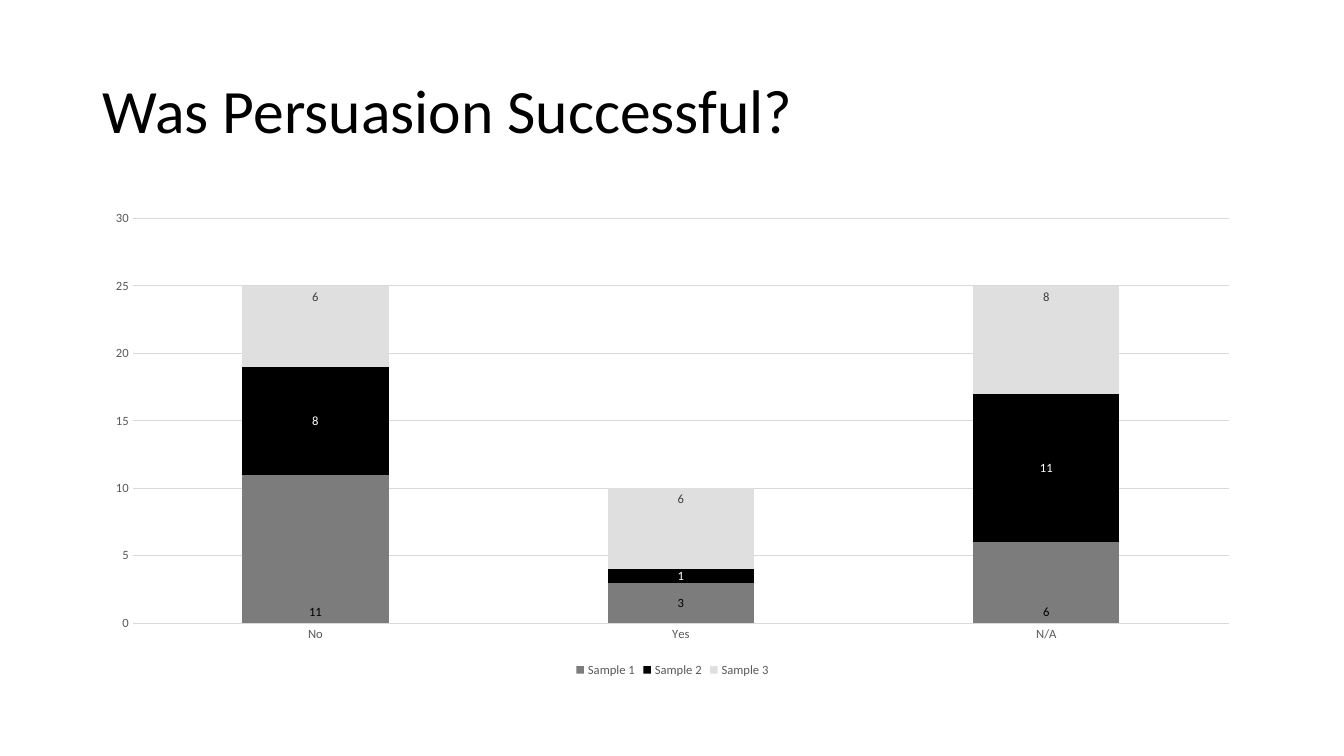
from pptx import Presentation
from pptx.chart.data import CategoryChartData
from pptx.dml.color import RGBColor
from pptx.enum.chart import XL_CHART_TYPE as CHART, XL_LABEL_POSITION as POS
from pptx.enum.chart import XL_LEGEND_POSITION as LEGEND, XL_TICK_MARK as TICK
from pptx.enum.text import MSO_ANCHOR as ANCHOR
from pptx.util import Inches, Pt

COLORS = {
    "black": "000000",
    "white": "FFFFFF",
    "gray": "7C7C7C",
    "light": "DFDFDF",
    "grid": "D9D9D9",
    "axis": "595959",
    "dark": "404040",
}
SAMPLES = [
    ("Sample 1", (11, 3, 6), "gray", POS.INSIDE_BASE, "black"),
    ("Sample 2", (8, 1, 11), "black", POS.CENTER, "white"),
    ("Sample 3", (6, 6, 8), "light", POS.INSIDE_END, "dark"),
]


def rgb(name):
    return RGBColor.from_string(COLORS[name])


def style_font(font, size, color):
    font.name = "Calibri"
    font.size = Pt(size)
    font.color.rgb = rgb(color)


prs = Presentation()
prs.slide_width = Inches(13.33)
prs.slide_height = Inches(7.5)
s = prs.slides.add_slide(prs.slide_layouts[6])

title = s.shapes.add_textbox(Inches(0.92), Inches(0.4), Inches(11.5), Inches(1.45))
tf = title.text_frame
tf.word_wrap = True
tf.vertical_anchor = ANCHOR.MIDDLE
p = tf.paragraphs[0]
p.line_spacing = 0.9
r = p.add_run()
r.text = "Was Persuasion Successful?"
style_font(r.font, 44, "black")

data = CategoryChartData()
data.categories = ["No", "Yes", "N/A"]
for name, values, *_ in SAMPLES:
    data.add_series(name, values)
chart = s.shapes.add_chart(
    CHART.COLUMN_STACKED, Inches(0.92), Inches(2), Inches(11.5), Inches(4.76), data
).chart
chart.has_title = False
style_font(chart.font, 10, "black")

chart.has_legend = True
chart.legend.position = LEGEND.BOTTOM
chart.legend.include_in_layout = False
style_font(chart.legend.font, 9, "axis")

cat_axis, val_axis = chart.category_axis, chart.value_axis
for axis in (cat_axis, val_axis):
    axis.major_tick_mark = TICK.NONE
    axis.minor_tick_mark = TICK.NONE
    style_font(axis.tick_labels.font, 9, "axis")
val_axis.minimum_scale = 0
val_axis.maximum_scale = 30
val_axis.major_unit = 5
val_axis.has_major_gridlines = True
val_axis.format.line.fill.background()
for line in (cat_axis.format.line, val_axis.major_gridlines.format.line):
    line.color.rgb = rgb("grid")
    line.width = Pt(0.75)

plot = chart.plots[0]
plot.gap_width = 150
plot.overlap = 100
plot.vary_by_categories = False
for series, (_, _, fill, position, label_color) in zip(plot.series, SAMPLES):
    series.format.fill.solid()
    series.format.fill.fore_color.rgb = rgb(fill)
    labels = series.data_labels
    labels.show_value = True
    labels.position = position
    style_font(labels.font, 9, label_color)

yes_label = plot.series[0].points[1].data_label
style_font(yes_label.font, 9, "black")
yes_label.position = POS.CENTER

prs.save("out.pptx")
